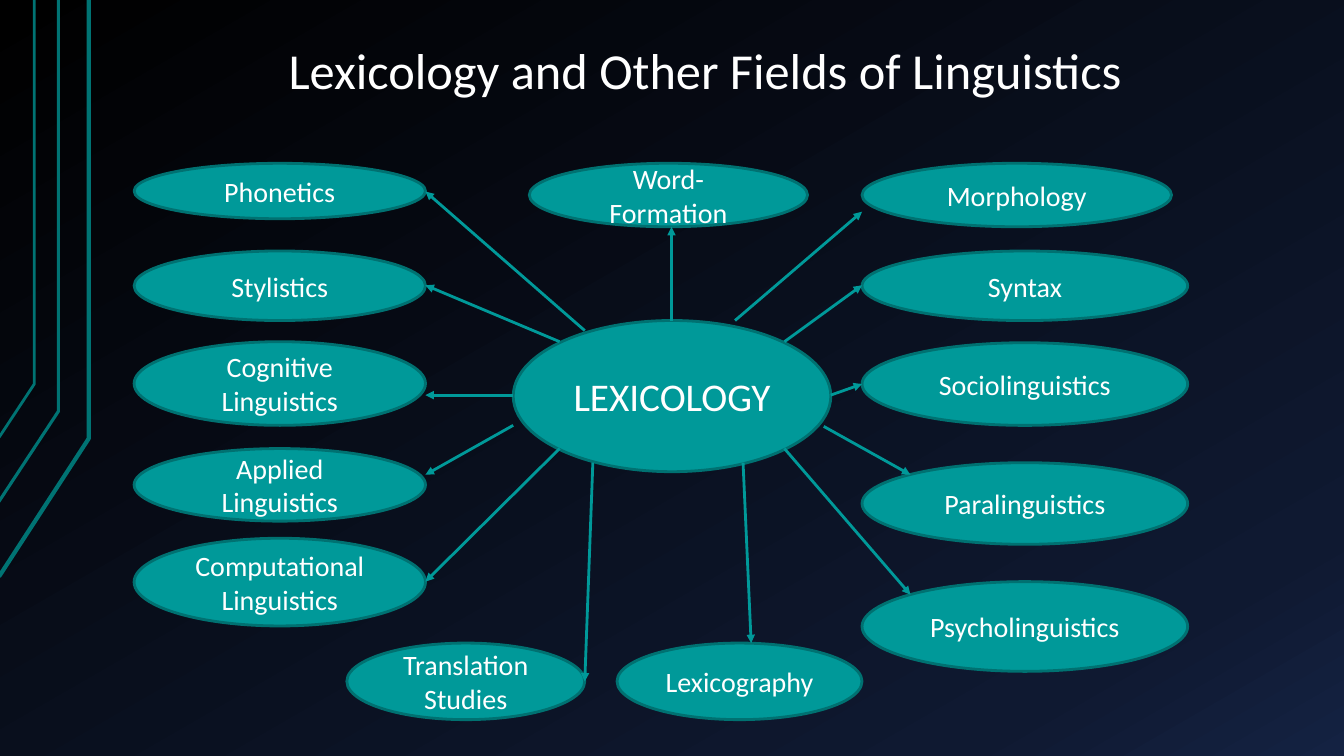
from copy import deepcopy

from lxml.etree import SubElement
from pptx import Presentation
from pptx.dml.color import RGBColor as Rgb
from pptx.enum.shapes import MSO_CONNECTOR as Link, MSO_SHAPE as Kind
from pptx.enum.text import MSO_ANCHOR as Anchor, PP_ALIGN as Align
from pptx.oxml.ns import qn
from pptx.util import Inches, Pt

HUE = {"teal": "009999", "rim": "007171", "deco": "007373", "text": "FFFFFF",
       "black": "000000", "navy": "0F1931", "blue": "142242"}
LEFT = [("Phonetics", 1.62, 0.55), ("Stylistics", 2.49, 0.69),
        ("Cognitive Linguistics", 3.39, 0.83),
        ("Applied Linguistics", 4.45, 0.72),
        ("Computational Linguistics", 5.34, 0.87)]
RIGHT = [("Syntax", 2.49, 0.69), ("Sociolinguistics", 3.4, 0.82),
         ("Paralinguistics", 4.59, 0.81), ("Psycholinguistics", 5.77, 0.89)]
OTHER = [("Word-Formation", 5.25, 1.62, 2.76, 0.63),
         ("Morphology", 8.55, 1.62, 3.07, 0.63),
         ("Translation Studies", 3.44, 6.38, 2.36, 0.76),
         ("Lexicography", 6.12, 6.38, 2.43, 0.76)]
ARROWS = [(6.66, 3.18, 6.66, 2.25), (7.29, 3.18, 8.55, 2.1),
          (7.78, 3.39, 8.55, 2.83), (8.24, 3.92, 8.55, 3.81),
          (8.17, 4.23, 9.03, 4.71), (7.78, 4.45, 9.03, 5.9),
          (5.8, 3.28, 4.22, 1.9), (5.55, 3.39, 4.22, 2.83),
          (5.09, 3.92, 4.22, 3.92), (5.09, 4.22, 4.22, 4.71),
          (5.55, 4.45, 4.22, 5.77), (5.88, 4.59, 5.8, 6.76),
          (7.37, 4.59, 7.45, 6.38)]
DECO = [(-0.01, 5.72, 0.88, 4.35, 3), (-0.02, 4.99, 0.58, 4.08, 2.25),
        (-0.01, 4.34, 0.34, 3.81, 2)]


def color(name):
    """Return the named colour."""
    return Rgb.from_string(HUE[name])


def apply(item, **values):
    """Set each given attribute on the item."""
    for name, value in values.items():
        setattr(item, name, value)


def stroke(line, name, width):
    """Give a line its colour and width."""
    line.color.rgb = color(name)
    line.width = Pt(width)


def paint(slide):
    """Fill the background with the three-stop gradient."""
    fill = slide.background.fill
    fill.gradient()
    fill.gradient_angle = 300
    stops = slide.element.find(".//" + qn("a:gsLst"))
    stops.append(deepcopy(stops[-1]))
    marks = [(0, "black"), (0.85, "navy"), (1, "blue")]
    for stop, (place, name) in zip(fill.gradient_stops, marks):
        stop.position = place
        stop.color.rgb = color(name)


def deco(slide, x, y, bend, turn, width):
    """Draw one bent line from the left edge up to the top."""
    pen = slide.shapes.build_freeform(Inches(x), Inches(y))
    pen.add_line_segments([(Inches(bend), Inches(turn)), (Inches(bend), 0)],
                          close=False)
    shape = pen.convert_to_shape()
    shape.shadow.inherit = False
    shape.fill.background()
    stroke(shape.line, "deco", width)


def write(shape, text, size):
    """Put centred white text in a shape."""
    frame = shape.text_frame
    frame.word_wrap = True
    para = frame.paragraphs[0]
    para.alignment = Align.CENTER
    run = para.add_run()
    run.text = text
    apply(run.font, name="Calibri", size=Pt(size))
    run.font.color.rgb = color("text")
    return frame


def title(slide, text):
    """Add the heading."""
    box = slide.shapes.add_textbox(*map(Inches, (1.33, 0.3, 11.33, 0.77)))
    frame = write(box, text, 36)
    side, edge = Inches(0.13), Inches(0.07)
    apply(frame, vertical_anchor=Anchor.BOTTOM, margin_left=side,
          margin_right=side, margin_top=edge, margin_bottom=edge)
    frame.paragraphs[0].line_spacing = 0.9


def oval(slide, text, x, y, wide, high, size=20):
    """Add one labelled ellipse."""
    shape = slide.shapes.add_shape(Kind.OVAL,
                                   *map(Inches, (x, y, wide, high)))
    shape.shadow.inherit = False
    shape.fill.solid()
    shape.fill.fore_color.rgb = color("teal")
    stroke(shape.line, "rim", 2)
    write(shape, text, size).vertical_anchor = Anchor.MIDDLE


def arrow(slide, *ends):
    """Add one arrow with a triangle at its end."""
    link = slide.shapes.add_connector(Link.STRAIGHT, *map(Inches, ends))
    stroke(link.line, "teal", 2)
    props = link.element.spPr
    SubElement(props.find(qn("a:ln")), qn("a:tailEnd"), type="triangle")
    SubElement(props, qn("a:effectLst"))


def main():
    """Build and save the slide."""
    deck = Presentation()
    apply(deck, slide_width=Inches(13.33), slide_height=Inches(7.5))
    slide = deck.slides.add_slide(deck.slide_layouts[6])
    paint(slide)
    for bent in DECO:
        deco(slide, *bent)
    title(slide, "Lexicology and Other Fields of Linguistics")
    oval(slide, "LEXICOLOGY", 5.09, 3.18, 3.15, 1.5, 28)
    for x, wide, column in ((1.33, 2.89, LEFT), (8.55, 3.23, RIGHT)):
        for text, y, high in column:
            oval(slide, text, x, y, wide, high)
    for field in OTHER:
        oval(slide, *field)
    for ends in ARROWS:
        arrow(slide, *ends)
    deck.save("out.pptx")


if __name__ == "__main__":
    main()
